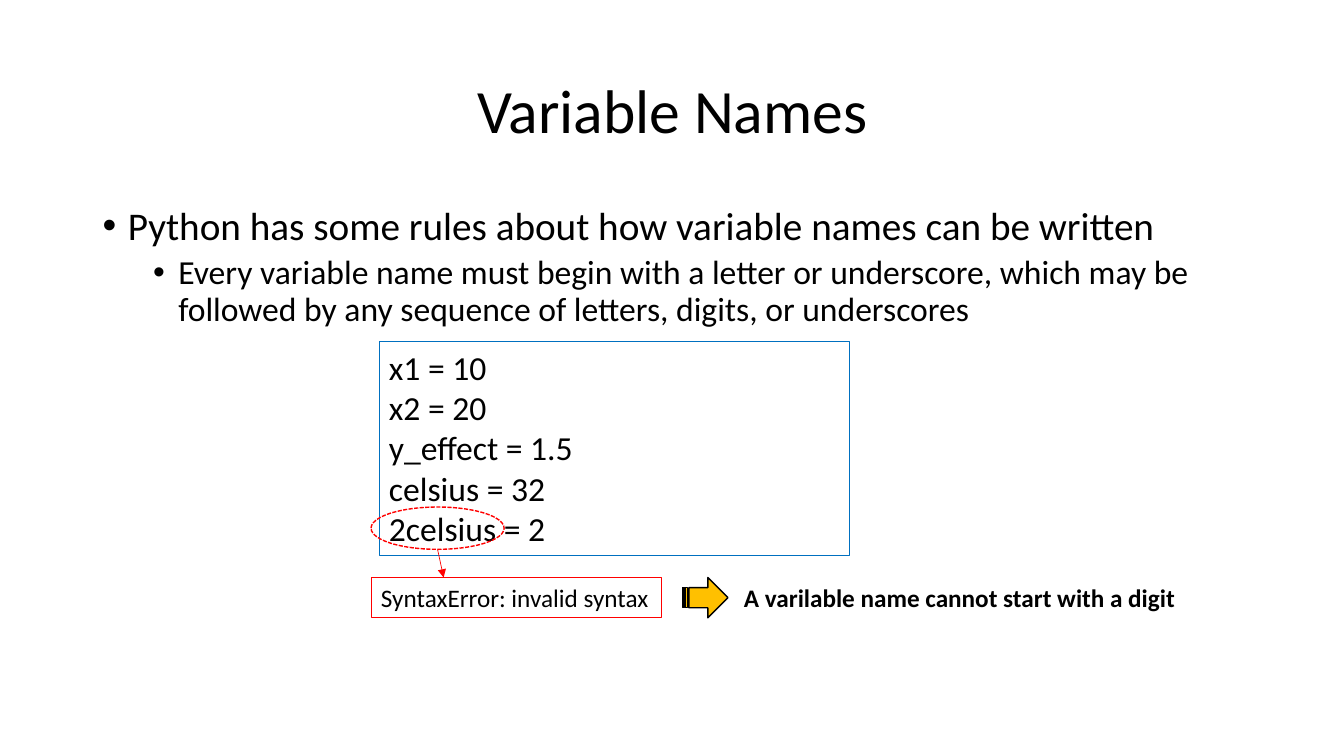
from dataclasses import dataclass

from lxml.etree import SubElement
from pptx import Presentation
from pptx.dml.color import RGBColor
from pptx.enum.dml import MSO_LINE
from pptx.enum.shapes import MSO_CONNECTOR, MSO_SHAPE as SHAPE
from pptx.enum.text import MSO_ANCHOR as ANCHOR, MSO_AUTO_SIZE as AUTO_SIZE, PP_ALIGN as ALIGN
from pptx.oxml.ns import qn
from pptx.util import Pt

PX = 9144


@dataclass(frozen=True)
class Theme:
    """Colours, font and type sizes of the slide."""
    font: str = "Calibri"
    ink: str = "000000"
    code_edge: str = "0070C0"
    error: str = "FF0000"
    arrow: str = "FFC000"
    title: int = 44
    rule: int = 28
    code: int = 24
    note: int = 18


THEME = Theme()
RULES = [
    (0, THEME.rule, "Python has some rules about how variable names can be written"),
    (1, THEME.code, "Every variable name must begin with a letter or underscore, which may be "
                    "followed by any sequence of letters, digits, or underscores"),
]
ASSIGNMENTS = ["x1 = 10", "x2 = 20", "y_effect = 1.5", "celsius = 32", "2celsius = 2"]


def emu(*lengths):
    """Turn px lengths into EMU."""
    return [length * PX for length in lengths]


def style(paragraph, size, bold=False, align=ALIGN.LEFT):
    """Set the font and alignment of a paragraph."""
    paragraph.alignment = align
    font = paragraph.font
    font.name, font.size, font.bold = THEME.font, Pt(size), bold
    font.color.rgb = RGBColor.from_string(THEME.ink)


def write(frame, lines, size, bold=False, wrap=True):
    """Fill a text frame with one paragraph per line."""
    frame.word_wrap = wrap
    frame.vertical_anchor = ANCHOR.TOP
    frame.text = "\n".join(lines)
    for paragraph in frame.paragraphs:
        style(paragraph, size, bold)


def add_outline(slide, kind, box, edge, weight, fill=None):
    """Add a preset shape with an edge and an optional fill."""
    shape = slide.shapes.add_shape(kind, *emu(*box))
    shape.shadow.inherit = False
    shape.line.color.rgb = RGBColor.from_string(edge)
    shape.line.width = Pt(weight)
    if fill:
        shape.fill.solid()
        shape.fill.fore_color.rgb = RGBColor.from_string(fill)
    else:
        shape.fill.background()
    return shape


def add_pointer(slide, start, end):
    """Add the thin red arrow from the bad name to its error."""
    pointer = slide.shapes.add_connector(MSO_CONNECTOR.STRAIGHT, *emu(*start, *end))
    pointer.line.color.rgb = RGBColor.from_string(THEME.error)
    pointer.line.width = Pt(0.5)
    SubElement(pointer.line._get_or_add_ln(), qn("a:tailEnd"), type="triangle")
    SubElement(pointer._element.spPr, qn("a:effectLst"))


def place_title(slide, box):
    """Move and format the title placeholder."""
    title = slide.shapes.title
    title.left, title.top, title.width, title.height = emu(*box)
    frame = title.text_frame
    frame.text = "Variable Names"
    frame.auto_size = AUTO_SIZE.NONE
    frame.vertical_anchor = ANCHOR.MIDDLE
    heading = frame.paragraphs[0]
    heading.line_spacing = 0.9
    style(heading, THEME.title, align=ALIGN.CENTER)


def add_rules(slide, box):
    """Add the bulleted naming rules."""
    frame = slide.shapes.add_textbox(*emu(*box)).text_frame
    frame.word_wrap = True
    for level, size, text in RULES:
        rule = frame.add_paragraph() if level else frame.paragraphs[0]
        rule.text, rule.level = text, level
        rule.line_spacing, rule.space_before = 0.9, Pt(10 - 5 * level)
        properties = rule._p.get_or_add_pPr()
        properties.set("marL", str(PX * (25 + 50 * level)))
        properties.set("indent", str(-25 * PX))
        SubElement(properties, qn("a:buFont"), typeface="Arial")
        SubElement(properties, qn("a:buChar"), char="•")
        style(rule, size)


def add_code(slide, box):
    """Add the framed list of assignments."""
    listing = add_outline(slide, SHAPE.RECTANGLE, box, THEME.code_edge, 0.75)
    write(listing.text_frame, ASSIGNMENTS, THEME.code)


def add_error(slide, box):
    """Ring the bad name and explain its error in the row below."""
    left, top, width, height = box
    row, row_height = top + 70, height - 70
    ring = add_outline(slide, SHAPE.OVAL, (left, top, 132, 42), THEME.error, 1)
    ring.line.dash_style = MSO_LINE.SQUARE_DOT
    add_pointer(slide, (left + 66, top + 42), (left + 72, row))
    message = add_outline(slide, SHAPE.RECTANGLE, (left, row, 288, row_height), THEME.error, 0.75)
    write(message.text_frame, ["SyntaxError: invalid syntax"], THEME.note, wrap=False)
    add_outline(slide, SHAPE.STRIPED_RIGHT_ARROW, (left + 309, row, 45, row_height),
                THEME.ink, 1, THEME.arrow)
    reason = slide.shapes.add_textbox(*emu(left + 360, row, width - 360, row_height))
    write(reason.text_frame, ["A varilable name cannot start with a digit"],
          THEME.note, bold=True, wrap=False)


def main():
    """Build the slide and save it."""
    deck = Presentation()
    deck.slide_width, deck.slide_height = emu(1333, 750)
    slide = deck.slides.add_slide(deck.slide_layouts[5])
    place_title(slide, (92, 40, 1150, 145))
    add_rules(slide, (92, 200, 1150, 513))
    add_code(slide, (376, 339, 467, 212))
    add_error(slide, (368, 503, 811, 110))
    deck.save("out.pptx")


if __name__ == "__main__":
    main()
